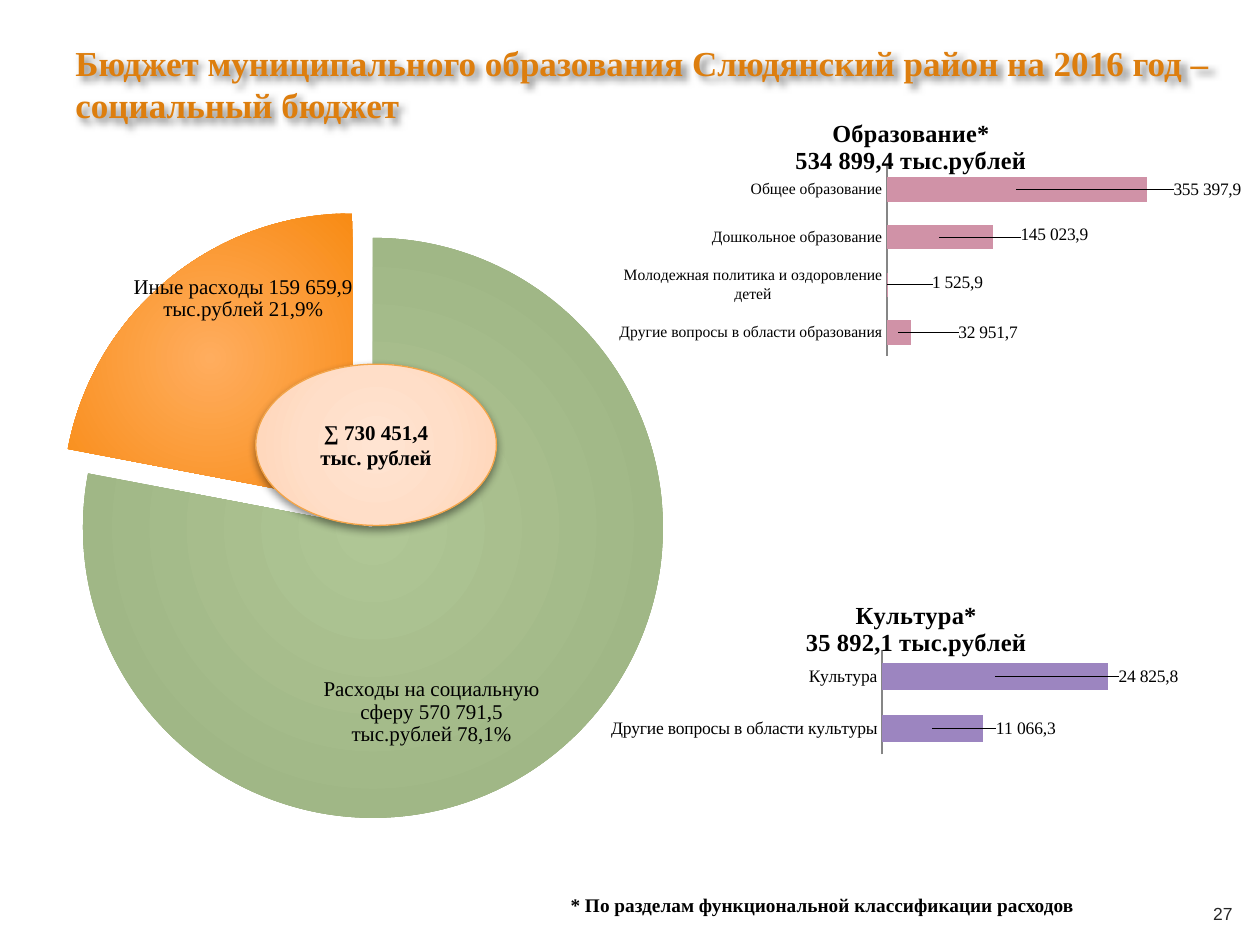
from dataclasses import dataclass

from lxml.etree import SubElement
from pptx import Presentation
from pptx.chart.data import CategoryChartData
from pptx.dml.color import RGBColor
from pptx.enum.chart import XL_CHART_TYPE, XL_LABEL_POSITION, XL_TICK_LABEL_POSITION, XL_TICK_MARK
from pptx.enum.shapes import MSO_SHAPE
from pptx.enum.text import MSO_ANCHOR, PP_ALIGN
from pptx.oxml import parse_xml
from pptx.oxml.ns import nsdecls, qn
from pptx.util import Inches, Pt


@dataclass(frozen=True)
class Theme:
    serif: str = "Times New Roman"
    sans: str = "Arial"
    black: str = "000000"
    number: str = "262626"
    heading: str = "DD7E0E"
    axis: str = "868686"
    outline: str = "F3A447"
    green: tuple = ("AFC695", "9AB07F")
    orange: tuple = ("FFAD5E", "F88B14")
    pink: str = "D092A7"
    purple: str = "9C85C0"
    heading_size: float = 20
    title_size: float = 14
    body_size: float = 12
    note_size: float = 11
    small_size: float = 10
    tiny_size: float = 9


THEME = Theme()
OVAL_STOPS = ((0, "FFE4D2"), (50, "FFDEC8"), (97, "FFD4B6"), (100, "FFD1B1"))


@dataclass(frozen=True)
class Box:
    left: float
    top: float
    width: float
    height: float

    def lengths(self) -> tuple:
        return tuple(Inches(value) for value in (self.left, self.top, self.width, self.height))


@dataclass(frozen=True)
class Bar:
    category: str
    value: float
    label: str
    shift: tuple


@dataclass(frozen=True)
class BarChart:
    box: Box
    title: tuple
    title_at: tuple
    plot: tuple
    color: str
    maximum: float
    category_size: float
    bars: tuple


@dataclass(frozen=True)
class Slice:
    category: str
    value: float
    colors: tuple
    explosion: int
    shift: tuple


EDUCATION = BarChart(
    Box(4.77, 0.82, 5.09, 2.07), ("Образование*", "534 899,4 тыс.рублей"), (0.3, 0.04),
    (0.45, 0.24, 0.46, 0.73), THEME.pink, 400000, THEME.tiny_size,
    (Bar("Другие вопросы в области образования", 32952, "32 951,7", (0.14, 0)),
     Bar("Молодежная политика и оздоровление детей", 1526, "1 525,9", (0.11, -0.01)),
     Bar("Дошкольное образование", 145024, "145 023,9", (0.18, -0.01)),
     Bar("Общее образование", 355398, "355 397,9", (0.3, 0))))
CULTURE = BarChart(
    Box(4.62, 4.64, 5.29, 1.45), ("Культура*", "35 892,1 тыс.рублей"), (0.33, 0.06),
    (0.45, 0.36, 0.41, 0.57), THEME.purple, 30000, THEME.small_size,
    (Bar("Другие вопросы в области культуры", 11066, "11 066,3", (0.14, 0)),
     Bar("Культура", 24826, "24 825,8", (0.23, 0))))
SLICES = (
    Slice("Расходы на социальную сферу 570 791,5 тыс.рублей 78,1%", 78, THEME.green, 0, (-0.04, 0.07)),
    Slice("Иные расходы 159 659,9 тыс.рублей 21,9%", 22, THEME.orange, 11, (-0.02, -0.09)))


def style_font(font, size: float, color: str = THEME.black, bold: bool = False, name: str = THEME.serif) -> None:
    for key, value in {"size": Pt(size), "bold": bold, "name": name}.items():
        setattr(font, key, value)
    font.color.rgb = RGBColor.from_string(color)


def shadow_xml(blur: float, distance: float, direction: int, alpha: int):
    return parse_xml(
        f'<a:effectLst {nsdecls("a")}><a:outerShdw blurRad="{Pt(blur)}" dist="{Pt(distance)}" '
        f'dir="{direction * 60000}" algn="ctr" rotWithShape="0"><a:srgbClr val="000000">'
        f'<a:alpha val="{alpha * 1000}"/></a:srgbClr></a:outerShdw></a:effectLst>')


def set_radial_fill(fill_format, properties, stops: tuple) -> None:
    marks = "".join(f'<a:gs pos="{place * 1000}"><a:srgbClr val="{color}"/></a:gs>' for place, color in stops)
    fill_format.solid()
    properties.replace(properties.find(qn("a:solidFill")), parse_xml(
        f'<a:gradFill {nsdecls("a")} rotWithShape="1"><a:gsLst>{marks}</a:gsLst><a:path path="circle">'
        '<a:fillToRect l="50000" t="50000" r="50000" b="50000"/></a:path></a:gradFill>'))


def make_layout(**values):
    layout = parse_xml(f'<c:layout {nsdecls("c")}><c:manualLayout/></c:layout>')
    for key, value in values.items():
        SubElement(layout[0], qn(f"c:{key}")).set("val", str(value))
    return layout


def add_label_extension(element, content: str) -> None:
    element.append(parse_xml(
        f'<c:extLst {nsdecls("c")}><c:ext uri="{{CE6537A1-D6FC-4f65-9D91-7224C49458BB}}" '
        'xmlns:c15="http://schemas.microsoft.com/office/drawing/2012/chart">'
        f'{content}</c:ext></c:extLst>'))


def set_plot_area(chart, area: tuple) -> None:
    plot_area = chart.plots[0]._element.getparent()
    for old in plot_area.findall(qn("c:layout")):
        plot_area.remove(old)
    left, top, width, height = area
    plot_area.insert(0, make_layout(layoutTarget="inner", xMode="edge", yMode="edge",
                                    x=left, y=top, w=width, h=height))


def shift_label(series, index: int, shift: tuple):
    label = series._element.find(qn("c:dLbls")).findall(qn("c:dLbl"))[index]
    label.find(qn("c:idx")).addnext(make_layout(x=shift[0], y=shift[1]))
    return label


def add_chart(slide, kind, box: Box, items: tuple):
    data = CategoryChartData()
    data.categories = [item.category for item in items]
    data.add_series("Series 1", [item.value for item in items])
    chart = slide.shapes.add_chart(kind, *box.lengths(), data).chart
    chart.has_legend = False
    chart.has_title = False
    style_font(chart.font, THEME.small_size)
    return chart


def add_pie(slide, box: Box, area: tuple) -> None:
    chart = add_chart(slide, XL_CHART_TYPE.PIE, box, SLICES)
    chart.plots[0].vary_by_categories = True
    set_plot_area(chart, area)
    series = chart.plots[0].series[0]
    labels = series.data_labels
    for key, value in {"show_category_name": True, "show_value": False, "show_percentage": False}.items():
        setattr(labels, key, value)
    style_font(labels.font, THEME.body_size)
    for index, part in enumerate(SLICES):
        point = series.points[index]
        fill = point.format.fill
        properties = series._element.findall(qn("c:dPt"))[index].find(qn("c:spPr"))
        set_radial_fill(fill, properties, ((0, part.colors[0]), (100, part.colors[1])))
        explosion = SubElement(properties.getparent(), qn("c:explosion"))
        explosion.set("val", str(part.explosion))
        properties.addprevious(explosion)
        label = point.data_label
        style_font(label.font, THEME.body_size)
        label.position = XL_LABEL_POSITION.CENTER
        element = shift_label(series, index, part.shift)
        for tag, shown in {"showVal": 0, "showCatName": 1, "showPercent": 0}.items():
            element.find(qn(f"c:{tag}")).set("val", str(shown))
        add_label_extension(element, '<c15:layout><c:manualLayout><c:w val="0.2"/><c:h val="0.1"/>'
                                     '</c:manualLayout></c15:layout>')


def add_bars(slide, spec: BarChart) -> None:
    chart = add_chart(slide, XL_CHART_TYPE.BAR_STACKED, spec.box, spec.bars)
    frame = chart.chart_title.text_frame
    for index, line in enumerate(spec.title):
        paragraph = frame.paragraphs[0] if index == 0 else frame.add_paragraph()
        run = paragraph.add_run()
        run.text = line
        style_font(run.font, THEME.title_size, bold=True)
    title = chart.chart_title._element
    for old in title.findall(qn("c:layout")):
        title.remove(old)
    title.find(qn("c:tx")).addnext(
        make_layout(xMode="edge", yMode="edge", x=spec.title_at[0], y=spec.title_at[1]))
    set_plot_area(chart, spec.plot)
    plot = chart.plots[0]
    axis = chart.category_axis
    settings = (
        (plot, {"gap_width": 95, "overlap": 100, "vary_by_categories": False}),
        (chart.value_axis, {"visible": False, "has_major_gridlines": False,
                            "minimum_scale": 0, "maximum_scale": spec.maximum}),
        (axis, {"major_tick_mark": XL_TICK_MARK.NONE, "minor_tick_mark": XL_TICK_MARK.NONE,
                "tick_label_position": XL_TICK_LABEL_POSITION.NEXT_TO_AXIS}))
    for target, values in settings:
        for key, value in values.items():
            setattr(target, key, value)
    style_font(axis.tick_labels.font, spec.category_size)
    axis.format.line.color.rgb = RGBColor.from_string(THEME.axis)
    series = plot.series[0]
    series.format.fill.solid()
    series.format.fill.fore_color.rgb = RGBColor.from_string(spec.color)
    series.data_labels.show_value = True
    for index, bar in enumerate(spec.bars):
        run = series.points[index].data_label.text_frame.paragraphs[0].add_run()
        run.text = bar.label
        style_font(run.font, THEME.small_size)
        shift_label(series, index, bar.shift)
    add_label_extension(series._element.find(qn("c:dLbls")), '<c15:showLeaderLines val="0"/>')


def write_text(shape, text: str, size: float, align=PP_ALIGN.LEFT, anchor=MSO_ANCHOR.MIDDLE, **font) -> None:
    frame = shape.text_frame
    for key, value in {"word_wrap": True, "vertical_anchor": anchor}.items():
        setattr(frame, key, value)
    paragraph = frame.paragraphs[0]
    paragraph.alignment = align
    run = paragraph.add_run()
    run.text = text
    style_font(run.font, size, **font)


def add_total(slide, box: Box) -> None:
    oval = slide.shapes.add_shape(MSO_SHAPE.OVAL, *box.lengths())
    set_radial_fill(oval.fill, oval._element.spPr, OVAL_STOPS)
    oval.line.color.rgb = RGBColor.from_string(THEME.outline)
    oval.line.width = Pt(0.75)
    oval._element.spPr.append(shadow_xml(5, 2, 90, 43))
    write_text(oval, "∑ 730 451,4 тыс. рублей", THEME.body_size, PP_ALIGN.CENTER, bold=True)


def main() -> None:
    """Build the social budget slide."""
    presentation = Presentation()
    presentation.slide_width, presentation.slide_height = Inches(10), Inches(7.5)
    slide = presentation.slides.add_slide(presentation.slide_layouts[6])
    heading = slide.shapes.add_textbox(*Box(0.5, 0.18, 9.25, 0.97).lengths())
    write_text(heading, "Бюджет муниципального образования Слюдянский район на 2016 год – социальный бюджет",
               THEME.heading_size, color=THEME.heading, bold=True)
    heading._element.spPr.append(shadow_xml(4, 3, 45, 50))
    add_pie(slide, Box(-0.49, 0.08, 6.7, 8.22), (0.17, 0.22, 0.69, 0.56))
    number = slide.shapes.add_textbox(*Box(9.45, 7.05, 0.51, 0.4).lengths())
    write_text(number, "27", THEME.small_size, PP_ALIGN.CENTER, color=THEME.number, name=THEME.sans)
    add_total(slide, Box(2.03, 2.89, 1.91, 1.28))
    for spec in (EDUCATION, CULTURE):
        add_bars(slide, spec)
    note = slide.shapes.add_textbox(*Box(4.43, 7.04, 5.57, 0.29).lengths())
    write_text(note, "* По разделам функциональной классификации расходов", THEME.note_size,
               anchor=MSO_ANCHOR.TOP, bold=True)
    presentation.save("out.pptx")


if __name__ == "__main__":
    main()
